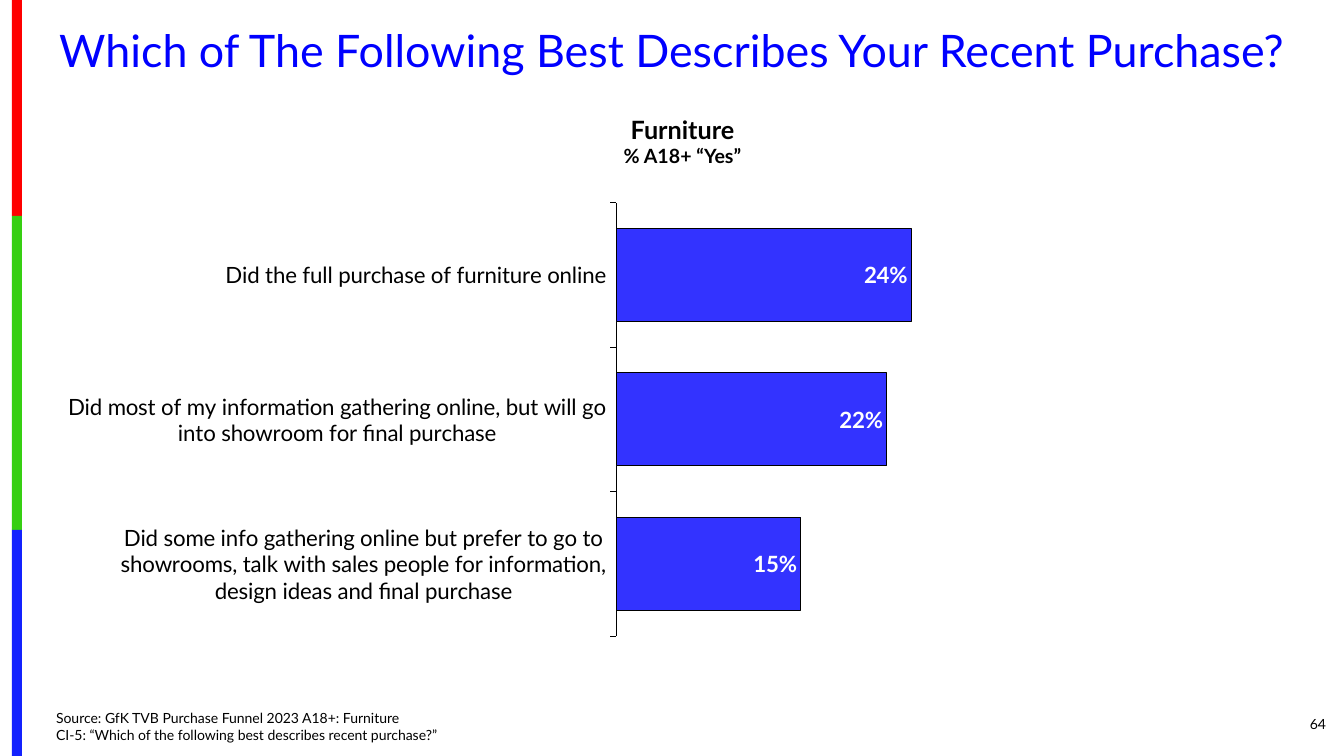
from lxml.etree import SubElement
from pptx import Presentation
from pptx.chart.data import CategoryChartData
from pptx.dml.color import RGBColor
from pptx.enum.chart import XL_CHART_TYPE, XL_LABEL_POSITION, XL_TICK_LABEL_POSITION, XL_TICK_MARK
from pptx.enum.shapes import MSO_SHAPE
from pptx.enum.text import MSO_ANCHOR, PP_ALIGN
from pptx.oxml import parse_xml
from pptx.oxml.ns import nsdecls, qn
from pptx.util import Pt

EMU_PER_PX = 914400 / 100.8
FONT = "Lato"
BLACK = RGBColor(0x00, 0x00, 0x00)
WHITE = RGBColor(0xFF, 0xFF, 0xFF)
TITLE_BLUE = RGBColor(0x00, 0x00, 0xFF)
BAR_BLUE = RGBColor(0x33, 0x33, 0xFF)
STRIPE_RED = RGBColor(0xFE, 0x00, 0x00)
STRIPE_GREEN = RGBColor(0x36, 0xCF, 0x12)
STRIPE_BLUE = RGBColor(0x13, 0x22, 0xFE)

ANSWERS = {
    "Did the full purchase of furniture online": 0.24,
    "Did most of my information gathering online, but will go into showroom for final purchase": 0.22,
    "Did some info gathering online but prefer to go to showrooms, talk with sales people "
    "for information, design ideas and final purchase": 0.15,
}


def px(length):
    """Convert pixels to EMU."""
    return round(length * EMU_PER_PX)


def style_font(font, size, color=BLACK, bold=False):
    """Apply the slide's typeface with a size and colour."""
    font.name = FONT
    font.size = Pt(size)
    font.bold = bold
    font.color.rgb = color


def place(shape, box):
    """Move a shape to a pixel box."""
    shape.left, shape.top, shape.width, shape.height = map(px, box)


def add_stripe(slide, box):
    """Stack the three coloured bands down the box."""
    left, top, width, height = box
    bands = [(STRIPE_RED, 216), (STRIPE_GREEN, 314), (STRIPE_BLUE, height - 530)]
    for color, band_height in bands:
        band = slide.shapes.add_shape(
            MSO_SHAPE.RECTANGLE, px(left), px(top), px(width), px(band_height))
        band.shadow.inherit = False
        band.fill.solid()
        band.fill.fore_color.rgb = color
        band.line.fill.background()
        top += band_height


def fill_title(slide, box):
    """Write the question in the title placeholder."""
    title = slide.shapes.title
    place(title, box)
    title.text_frame.text = "Which of The Following Best Describes Your Recent Purchase?"
    title.text_frame.vertical_anchor = MSO_ANCHOR.MIDDLE
    paragraph = title.text_frame.paragraphs[0]
    paragraph.alignment = PP_ALIGN.CENTER
    paragraph.line_spacing = 0.9
    style_font(paragraph.font, 32, TITLE_BLUE)


def fill_source(slide, box):
    """Write the source note in the body placeholder."""
    body = slide.placeholders[1]
    place(body, box)
    body.text_frame.vertical_anchor = MSO_ANCHOR.BOTTOM
    paragraph = body.text_frame.paragraphs[0]
    paragraph.text = ("Source: GfK TVB Purchase Funnel 2023 A18+: Furniture\v"
                      "CI-5: “Which of the following best describes recent purchase?”")
    properties = paragraph._p.get_or_add_pPr()
    properties.set("marL", "0")
    properties.set("indent", "0")
    SubElement(properties, qn("a:buNone"))
    paragraph.space_before = Pt(0)
    style_font(paragraph.font, 10)


def add_text(slide, box, lines, alignment, bold=False, anchor=MSO_ANCHOR.TOP, wrap=True):
    """Add a text box with one paragraph per (text, size) line."""
    frame = slide.shapes.add_textbox(*map(px, box)).text_frame
    frame.word_wrap = wrap
    frame.vertical_anchor = anchor
    for index, (text, size) in enumerate(lines):
        paragraph = frame.add_paragraph() if index else frame.paragraphs[0]
        paragraph.text = text
        paragraph.alignment = alignment
        style_font(paragraph.font, size, bold=bold)


def set_plot_layout(chart, x, y, width, height):
    """Fix the inner plot area as fractions of the chart."""
    plot_area = chart._chartSpace.chart.plotArea
    for layout in plot_area.findall(qn("c:layout")):
        plot_area.remove(layout)
    plot_area.insert(0, parse_xml(
        f'<c:layout {nsdecls("c")}><c:manualLayout><c:layoutTarget val="inner"/>'
        f'<c:xMode val="edge"/><c:yMode val="edge"/><c:x val="{x}"/><c:y val="{y}"/>'
        f'<c:w val="{width}"/><c:h val="{height}"/></c:manualLayout></c:layout>'))


def add_answer_chart(slide, box):
    """Add the bar chart of answers."""
    data = CategoryChartData(number_format="0%")
    data.categories = list(ANSWERS)
    data.add_series("Series 1", list(ANSWERS.values()))
    chart = slide.shapes.add_chart(
        XL_CHART_TYPE.BAR_CLUSTERED, *map(px, box), data).chart
    chart.has_legend = False
    chart.has_title = False
    style_font(chart.font, 12)
    set_plot_layout(chart, 0.45, 0.04, 0.46, 0.92)

    category_axis = chart.category_axis
    category_axis.reverse_order = True
    category_axis.has_major_gridlines = False
    category_axis.major_tick_mark = XL_TICK_MARK.OUTSIDE
    category_axis.tick_label_position = XL_TICK_LABEL_POSITION.NEXT_TO_AXIS
    category_axis.format.line.color.rgb = BLACK
    category_axis.format.line.width = Pt(0.75)
    style_font(category_axis.tick_labels.font, 16)

    value_axis = chart.value_axis
    value_axis.minimum_scale = 0
    value_axis.maximum_scale = 0.45
    value_axis.major_unit = 0.1
    value_axis.has_major_gridlines = False
    value_axis.visible = False

    plot = chart.plots[0]
    plot.gap_width = 55
    plot.vary_by_categories = False
    series = plot.series[0]
    series.format.fill.solid()
    series.format.fill.fore_color.rgb = BAR_BLUE
    series.format.line.color.rgb = BLACK
    series.format.line.width = Pt(0.75)
    labels = series.data_labels
    labels.show_value = True
    labels.position = XL_LABEL_POSITION.INSIDE_END
    labels.number_format = "0%"
    labels.number_format_is_linked = False
    style_font(labels.font, 16, WHITE, bold=True)


def main():
    """Build the slide and save it."""
    presentation = Presentation()
    presentation.slide_width, presentation.slide_height = px(1344), px(756)
    slide = presentation.slides.add_slide(presentation.slide_layouts[1])
    add_stripe(slide, (12, 0, 10, 756))
    fill_title(slide, (46, 23, 1252, 60))
    add_text(slide, (1227, 704, 109, 40), [("64", 10)], PP_ALIGN.RIGHT,
             anchor=MSO_ANCHOR.MIDDLE)
    fill_source(slide, (46, 704, 953, 44))
    add_text(slide, (600, 109, 165, 65), [("Furniture", 18), ("% A18+ “Yes”", 14)],
             PP_ALIGN.CENTER, bold=True, wrap=False)
    add_answer_chart(slide, (68, 184, 1210, 471))
    presentation.save("out.pptx")


if __name__ == "__main__":
    main()
